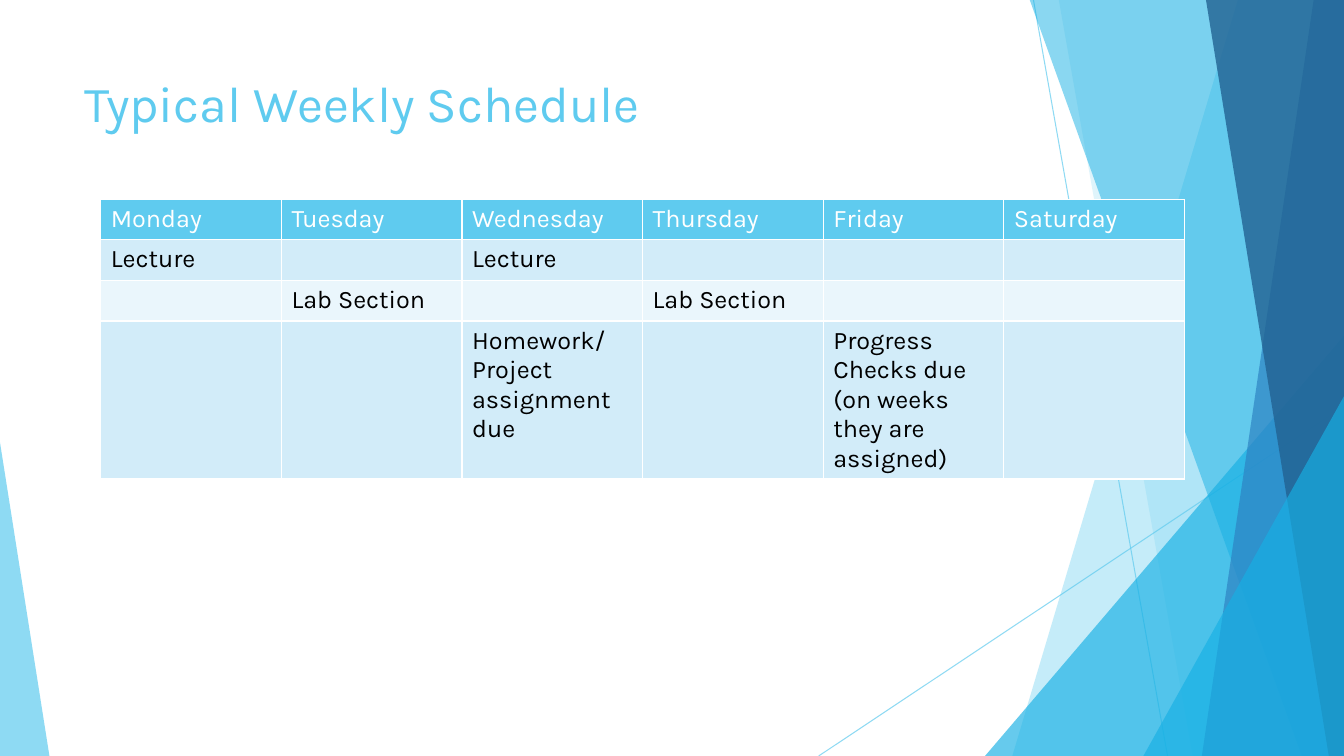
from dataclasses import dataclass
from lxml.etree import SubElement
from pptx import Presentation
from pptx.dml.color import RGBColor
from pptx.enum.shapes import MSO_CONNECTOR, MSO_SHAPE
from pptx.enum.text import MSO_ANCHOR, PP_ALIGN
from pptx.oxml.ns import qn
from pptx.util import Inches, Pt


@dataclass(frozen=True)
class Theme:
    font: str = "Karla"
    title_size: int = 36
    table_size: int = 18
    sky: str = "5FCBEF"
    cyan: str = "17B0E4"
    blue: str = "2E83C3"
    navy: str = "226292"
    band_dark: str = "D2ECF9"
    band_light: str = "EAF6FC"
    white: str = "FFFFFF"
    black: str = "000000"


THEME = Theme()
WIDTH, HEIGHT, TOP = 13.33, 7.5, -0.01

TITLE = "Typical Weekly Schedule"
SCHEDULE = [
    ["Monday", "Tuesday", "Wednesday", "Thursday", "Friday", "Saturday"],
    ["Lecture", "", "Lecture", "", "", ""],
    ["", "Lab Section", "", "Lab Section", "", ""],
    ["", "", "Homework/ Project assignment due", "",
     "Progress Checks due (on weeks they are assigned)", ""],
]
ROW_HEIGHTS = [0.37, 0.37, 0.37, 1.48]
TABLE_LEFT, TABLE_TOP, TABLE_WIDTH = 1, 1.98, 10.75

RAYS = [((10.25, 0), (11.58, HEIGHT)), ((WIDTH, 4.03), (8.12, HEIGHT))]
RAY_ALPHA = 70

# (kind, geometry, colour, opacity)
FACETS = [
    ("band", (12.28, 10.04), THEME.sky, 36),
    ("band", (10.5, 11.83), THEME.sky, 20),
    ("triangle", (9.77, 3.33, 3.56, 1), THEME.cyan, 66),
    ("band", (10.21, 12.91), THEME.cyan, 50),
    ("band", (13.03, 11.92), THEME.blue, 70),
    ("band", (11.96, 13.18), THEME.navy, 80),
    ("triangle", (11.34, 3.93, 1.99, 1), THEME.cyan, 66),
    ("triangle", (0, 4.39, 0.49, 0), THEME.sky, 70),
]


def paint(fill, color, opacity=100):
    fill.solid()
    fill.fore_color.rgb = RGBColor.from_string(color)
    if opacity < 100:
        for tint in fill._xPr.iter(qn("a:srgbClr")):
            SubElement(tint, qn("a:alpha")).set("val", str(opacity * 1000))


def style_text(frame, size, color):
    for paragraph in frame.paragraphs:
        paragraph.alignment = PP_ALIGN.LEFT
        for run in paragraph.runs:
            run.font.name = THEME.font
            run.font.size = Pt(size)
            run.font.bold = False
            run.font.color.rgb = RGBColor.from_string(color)


def add_ray(shapes, start, end):
    ray = shapes.add_connector(
        MSO_CONNECTOR.STRAIGHT, *(Inches(value) for value in start + end))
    ray.line.width = Pt(0.75)
    paint(ray.line.fill, THEME.sky, RAY_ALPHA)
    SubElement(ray._element.spPr, qn("a:effectLst"))


def add_facet(shapes, kind, geometry, color, opacity):
    if kind == "band":
        top_x, bottom_x = geometry
        corners = [(top_x, TOP), (WIDTH, TOP), (WIDTH, HEIGHT), (bottom_x, HEIGHT)]
        points = [(Inches(x), Inches(y)) for x, y in corners]
        outline = shapes.build_freeform(*points[0])
        outline.add_line_segments(points[1:], close=True)
        facet = outline.convert_to_shape()
    else:
        left, top, width, apex = geometry
        facet = shapes.add_shape(
            MSO_SHAPE.ISOSCELES_TRIANGLE, Inches(left), Inches(top),
            Inches(width), Inches(HEIGHT - top))
        facet.adjustments[0] = apex
    paint(facet.fill, color, opacity)
    facet.line.fill.background()
    facet.shadow.inherit = False


def add_title(title):
    title.left, title.top = Inches(0.74), Inches(0.67)
    title.width, title.height = Inches(9.4), Inches(1.44)
    title.text_frame.text = TITLE
    title.text_frame.word_wrap = True
    title.text_frame.vertical_anchor = MSO_ANCHOR.TOP
    style_text(title.text_frame, THEME.title_size, THEME.sky)


def add_schedule(shapes):
    days = len(SCHEDULE[0])
    schedule = shapes.add_table(
        len(SCHEDULE), days, Inches(TABLE_LEFT), Inches(TABLE_TOP),
        Inches(TABLE_WIDTH), Inches(sum(ROW_HEIGHTS))).table
    for column in schedule.columns:
        column.width = Inches(TABLE_WIDTH / days)
    for index, (entries, height) in enumerate(zip(SCHEDULE, ROW_HEIGHTS)):
        schedule.rows[index].height = Inches(height)
        band = THEME.band_dark if index % 2 else THEME.band_light
        background = band if index else THEME.sky
        ink = THEME.black if index else THEME.white
        for day, entry in enumerate(entries):
            cell = schedule.cell(index, day)
            paint(cell.fill, background)
            if entry:
                cell.text_frame.text = entry
                style_text(cell.text_frame, THEME.table_size, ink)


def main():
    deck = Presentation()
    deck.slide_width, deck.slide_height = Inches(WIDTH), Inches(HEIGHT)
    slide = deck.slides.add_slide(deck.slide_layouts[5])
    for start, end in RAYS:
        add_ray(slide.shapes, start, end)
    for facet in FACETS:
        add_facet(slide.shapes, *facet)
    add_title(slide.shapes.title)
    add_schedule(slide.shapes)
    deck.save("out.pptx")


if __name__ == "__main__":
    main()
